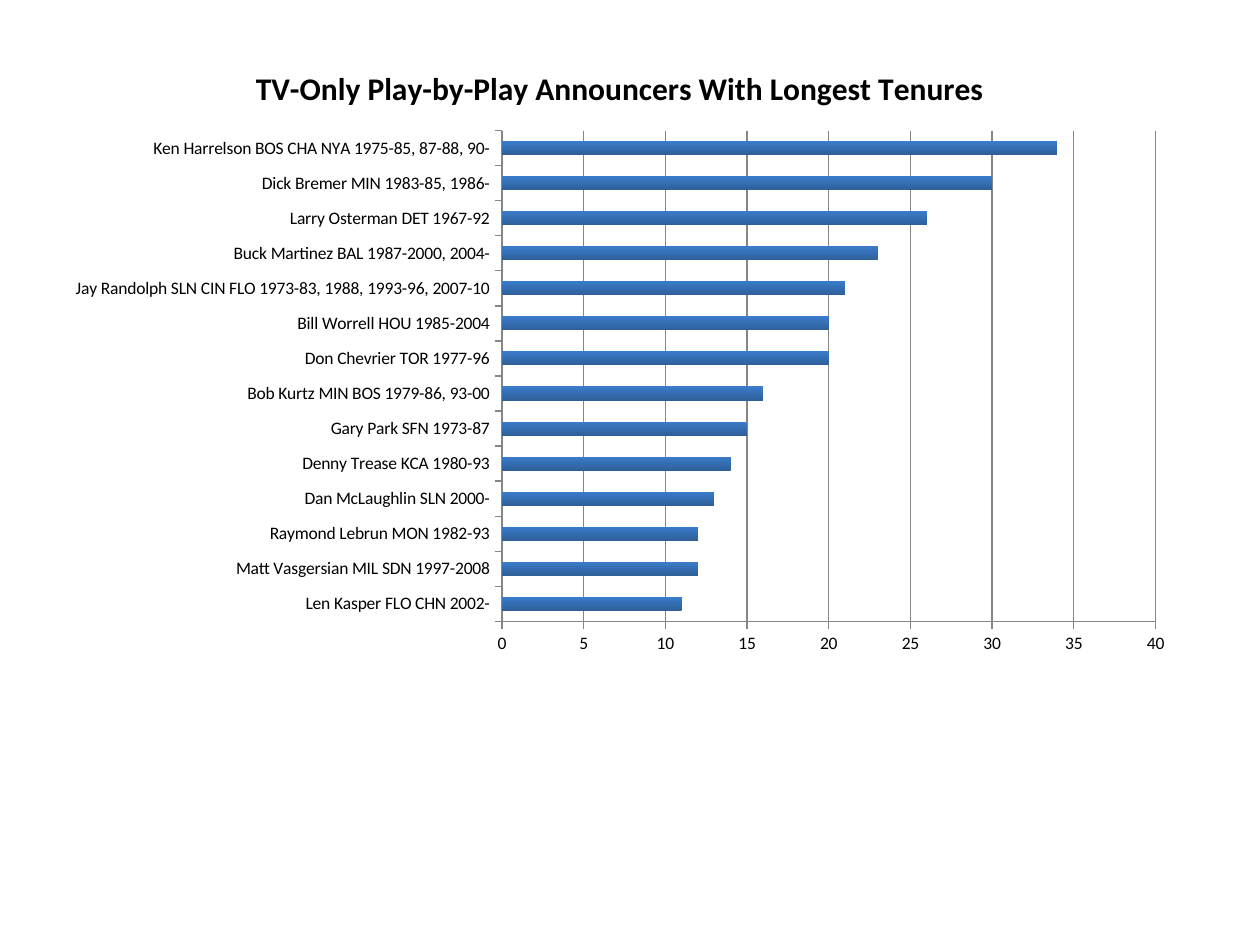
import pptx
import pptx.chart.data
import pptx.dml.color
import pptx.enum.chart
import pptx.util

TITLE = "TV-Only Play-by-Play Announcers With Longest Tenures"
TENURES = [  # bottom bar first
    ("Len Kasper FLO CHN 2002-", 11),
    ("Matt Vasgersian MIL SDN 1997-2008", 12),
    ("Raymond Lebrun MON 1982-93", 12),
    ("Dan McLaughlin SLN 2000-", 13),
    ("Denny Trease KCA 1980-93", 14),
    ("Gary Park SFN 1973-87", 15),
    ("Bob Kurtz MIN BOS 1979-86, 93-00", 16),
    ("Don Chevrier TOR 1977-96", 20),
    ("Bill Worrell HOU 1985-2004", 20),
    ("Jay Randolph SLN CIN FLO 1973-83, 1988, 1993-96, 2007-10", 21),
    ("Buck Martinez BAL 1987-2000, 2004-", 23),
    ("Larry Osterman DET 1967-92", 26),
    ("Dick Bremer MIN 1983-85, 1986-", 30),
    ("Ken Harrelson BOS CHA NYA 1975-85, 87-88, 90-", 34),
]
COLORS = {"text": "000000", "axis": "868686", "bar_bottom": "2E5F99", "bar_top": "3A7CCB"}
FONT = "Calibri"
PX = 914400 // 126
SLIDE_SIZE = (1260, 945)
CHART_BOX = (53, 42, 1134, 624)


def rgb(name):
    return pptx.dml.color.RGBColor.from_string(COLORS[name])


def style_font(font, size, bold=False):
    font.name = FONT
    font.size = pptx.util.Pt(size)
    font.bold = bold
    font.color.rgb = rgb("text")


def style_line(line):
    line.color.rgb = rgb("axis")
    line.width = pptx.util.Pt(0.75)


def add_tenure_chart(slide):
    data = pptx.chart.data.CategoryChartData()
    data.categories = [announcer for announcer, years in TENURES]
    data.add_series(TITLE, [years for announcer, years in TENURES])
    chart = slide.shapes.add_chart(
        pptx.enum.chart.XL_CHART_TYPE.BAR_CLUSTERED,
        *(length * PX for length in CHART_BOX), data).chart
    style_font(chart.font, 10)
    chart.has_legend = False

    chart.has_title = True
    chart.chart_title.include_in_layout = False
    chart.chart_title.text_frame.text = TITLE
    style_font(chart.chart_title.text_frame.paragraphs[0].runs[0].font, 18, bold=True)

    for axis in (chart.category_axis, chart.value_axis):
        axis.major_tick_mark = pptx.enum.chart.XL_TICK_MARK.OUTSIDE
        axis.minor_tick_mark = pptx.enum.chart.XL_TICK_MARK.NONE
        style_line(axis.format.line)
    chart.value_axis.minimum_scale = 0
    chart.value_axis.maximum_scale = 40
    chart.value_axis.major_unit = 5
    chart.value_axis.has_major_gridlines = True
    style_line(chart.value_axis.major_gridlines.format.line)

    plot = chart.plots[0]
    plot.gap_width = 150
    plot.vary_by_categories = False
    fill = plot.series[0].format.fill
    fill.gradient()
    fill.gradient_angle = 90
    for stop, name in zip(fill.gradient_stops, ("bar_bottom", "bar_top")):
        stop.color.rgb = rgb(name)


def main():
    presentation = pptx.Presentation()
    presentation.slide_width, presentation.slide_height = (side * PX for side in SLIDE_SIZE)
    slide = presentation.slides.add_slide(presentation.slide_layouts.get_by_name("Blank"))
    add_tenure_chart(slide)
    presentation.save("out.pptx")


if __name__ == "__main__":
    main()
